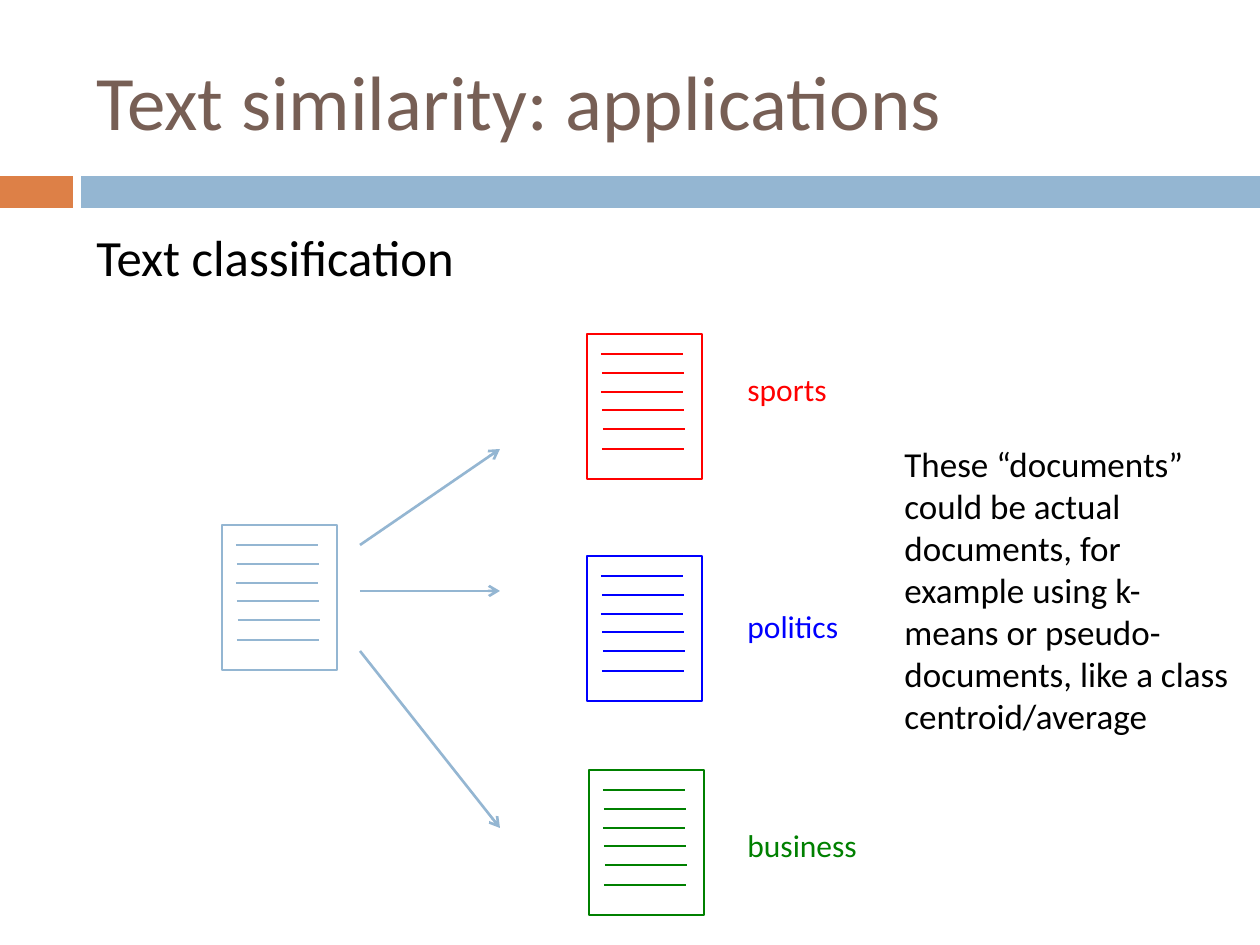
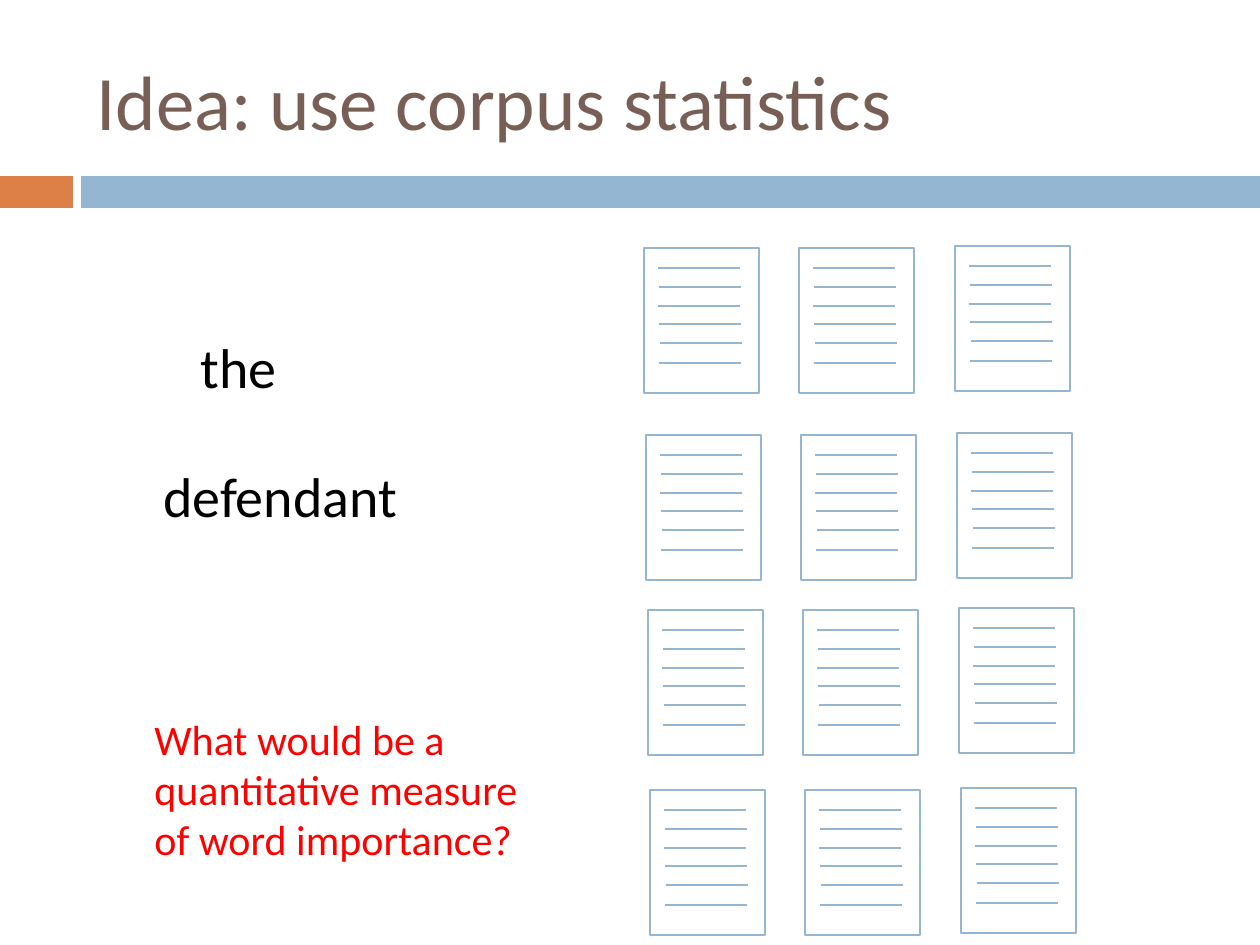
from lxml.etree import SubElement
from pptx import Presentation
from pptx.dml.color import RGBColor
from pptx.enum.shapes import MSO_CONNECTOR, MSO_SHAPE
from pptx.enum.text import MSO_ANCHOR, MSO_AUTO_SIZE, PP_ALIGN
from pptx.oxml.ns import qn
from pptx.util import Pt

PX = 914400 / 126
FONT = "Calibri"
COLORS = {
    "title": "775F55", "orange": "DD8047", "sky": "94B6D2", "black": "000000",
    "red": "FF0000", "blue": "0000FF", "green": "008000",
}

# Shared parts: left, top, width, height
TITLE = (84, 32, 1124, 136)
BANDS = [("orange", (0, 176, 73, 32)), ("sky", (81, 176, 1179, 32))]

# A document page: its size, and where each written line starts
PAGE = (115, 145)
LINES = [(14, 20), (15, 39), (14, 58), (15, 76), (16, 95), (15, 115)]
LENGTH = 82

# Text: words, box, size, colour, space before
APPS = {
    "title": "Text similarity: applications",
    "texts": [
        ("Text classification", (84, 220, 1124, 113), 29, "black", 7),
        ("These “documents” could be actual documents, for example using "
         "k-means or pseudo-documents, like a class centroid/average",
         (892, 436, 355, 310), 20, "black", 0),
    ],
    "source": (222, 525),
    # class, colour, page corner, label top, arrow start and end heights
    "classes": [
        ("sports", "red", (587, 334), 364, 545, 449),
        ("politics", "blue", (587, 556), 601, 591, 591),
        ("business", "green", (589, 770), 820, 651, 828),
    ],
    "label": (735, 170, 50),
    "arrows": (360, 500),
}
IDEA = {
    "title": "Idea: use corpus statistics",
    "texts": [
        ("the", (188, 326, 155, 81), 32, "black", 0),
        ("defendant", (151, 455, 282, 81), 32, "black", 0),
        ("What would be a quantitative measure of word importance?",
         (142, 707, 401, 165), 24, "red", 0),
    ],
    # column left and lift; row top
    "cols": [(644, 0), (799, 0), (955, 2)],
    "rows": [248, 435, 610, 790],
    "drift": 2,
}


def emu(*sizes):
    return [round(size * PX) for size in sizes]


def rgb(color):
    return RGBColor.from_string(COLORS[color])


def write(frame, words, size, color, before=0):
    para = frame.paragraphs[0]
    para.alignment = PP_ALIGN.LEFT
    para.space_before = Pt(before)
    run = para.add_run()
    run.text = words
    run.font.name = FONT
    run.font.size = Pt(size)
    run.font.color.rgb = rgb(color)


def add_text(slide, words, box, size, color, before=0):
    frame = slide.shapes.add_textbox(*emu(*box)).text_frame
    frame.word_wrap = True
    frame.auto_size = MSO_AUTO_SIZE.SHAPE_TO_FIT_TEXT
    write(frame, words, size, color, before)


def add_rect(shapes, box, fill=None, line=None):
    rect = shapes.add_shape(MSO_SHAPE.RECTANGLE, *emu(*box))
    rect.shadow.inherit = False
    if fill:
        rect.fill.solid()
        rect.fill.fore_color.rgb = rgb(fill)
    else:
        rect.fill.background()
    if line:
        rect.line.color.rgb = rgb(line)
        rect.line.width = Pt(0.79)
    else:
        rect.line.fill.background()
    return rect


def add_line(shapes, start, end, color, arrow=False):
    line = shapes.add_connector(MSO_CONNECTOR.STRAIGHT, *emu(*start, *end))
    line.line.color.rgb = rgb(color)
    line.line.width = Pt(1.5)
    if arrow:
        SubElement(line.line._get_or_add_ln(), qn("a:tailEnd"), type="arrow")
    SubElement(line.element.spPr, qn("a:effectLst"))


def add_page(slide, left, top, color):
    """Group a blank sheet with its written lines."""
    shapes = slide.shapes.add_group_shape().shapes
    add_rect(shapes, (left, top, *PAGE), line=color)
    for dx, dy in LINES:
        x, y = left + dx, top + dy
        add_line(shapes, (x, y), (x + LENGTH, y), color)


def add_bands(slide, layout):
    """Draw the bands and hand them to the layout, so all slides show them."""
    for color, box in BANDS:
        band = add_rect(slide.shapes, box, fill=color)
        layout.shapes.element.append(band.element)


def add_slide(deck, layout, data):
    slide = deck.slides.add_slide(layout)
    title = slide.shapes.title
    title.left, title.top, title.width, title.height = emu(*TITLE)
    frame = title.text_frame
    frame.vertical_anchor = MSO_ANCHOR.MIDDLE
    frame.auto_size = MSO_AUTO_SIZE.NONE
    write(frame, data["title"], 44, "title")
    for text in data["texts"]:
        add_text(slide, *text)
    return slide


def draw_apps(slide):
    add_page(slide, *APPS["source"], "sky")
    x, width, height = APPS["label"]
    tail, head = APPS["arrows"]
    for name, color, corner, top, start, end in APPS["classes"]:
        add_page(slide, *corner, color)
        add_line(slide.shapes, (tail, start), (head, end), "sky", arrow=True)
        add_text(slide, name, (x, top, width, height), 18, color)


def draw_idea(slide):
    for row, top in enumerate(IDEA["rows"]):
        for left, lift in IDEA["cols"]:
            add_page(slide, left + row * IDEA["drift"], top - lift, "sky")


def main():
    deck = Presentation()
    deck.slide_width, deck.slide_height = emu(1260, 945)
    layout = deck.slide_layouts.get_by_name("Title Only")
    apps = add_slide(deck, layout, APPS)
    add_bands(apps, layout)
    draw_apps(apps)
    draw_idea(add_slide(deck, layout, IDEA))
    deck.save("out.pptx")


if __name__ == "__main__":
    main()
